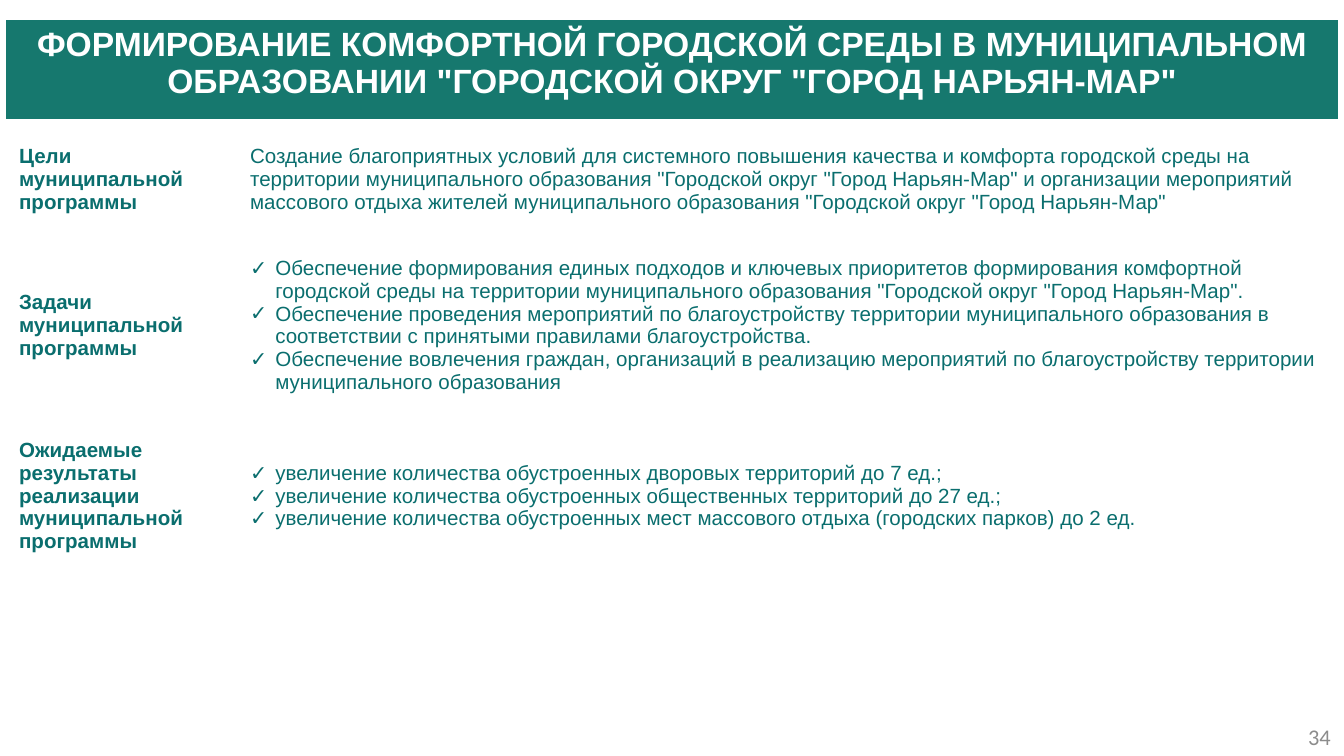
from typing import NamedTuple

from lxml import etree
from pptx import Presentation
from pptx.dml.color import RGBColor
from pptx.enum.text import MSO_ANCHOR, PP_ALIGN
from pptx.oxml.ns import qn
from pptx.util import Pt

LEFT, CENTER, RIGHT = PP_ALIGN.LEFT, PP_ALIGN.CENTER, PP_ALIGN.RIGHT
TOP, MIDDLE = MSO_ANCHOR.TOP, MSO_ANCHOR.MIDDLE

WHITE, BANNER, TEAL, GREY = "FFFFFF", "16786E", "0A6E6E", "8C8C8C"
CHECK = "✓"
INDENT = 13.5
COLUMN_WIDTHS = (123.8, 590.4)
BANNER_HEIGHT = 54


class Section(NamedTuple):
    label: str
    lines: tuple[str, ...]
    height: float
    bullet: str = ""


BANNER_TEXT = (
    "ФОРМИРОВАНИЕ КОМФОРТНОЙ ГОРОДСКОЙ СРЕДЫ В МУНИЦИПАЛЬНОМ "
    'ОБРАЗОВАНИИ "ГОРОДСКОЙ ОКРУГ "ГОРОД НАРЬЯН-МАР"'
)
SECTIONS = (
    Section(
        "Цели муниципальной программы",
        ("Создание благоприятных условий для системного повышения качества и "
         "комфорта городской среды на территории муниципального образования "
         '"Городской округ "Город Нарьян-Мар" и организации мероприятий '
         "массового отдыха жителей муниципального образования "
         '"Городской округ "Город Нарьян-Мар"',),
        64,
    ),
    Section(
        "Задачи муниципальной программы",
        ("Обеспечение формирования единых подходов и ключевых приоритетов "
         "формирования комфортной городской среды на территории муниципального "
         'образования "Городской округ "Город Нарьян-Мар".',
         "Обеспечение проведения мероприятий по благоустройству территории "
         "муниципального образования в соответствии с принятыми правилами "
         "благоустройства.",
         "Обеспечение вовлечения граждан, организаций в реализацию мероприятий "
         "по благоустройству территории муниципального образования"),
        92.2, CHECK,
    ),
    Section(
        "Ожидаемые результаты реализации муниципальной программы",
        ("увеличение количества обустроенных дворовых территорий до 7 ед.;",
         "увеличение количества обустроенных общественных территорий до 27 ед.;",
         "увеличение количества обустроенных мест массового отдыха "
         "(городских парков) до 2 ед."),
        90.7, CHECK,
    ),
)


def rgb(value: str) -> RGBColor:
    return RGBColor.from_string(value)


def add_bullet(para, symbol: str) -> None:
    properties = para._p.get_or_add_pPr()
    properties.set("marL", str(Pt(INDENT)))
    properties.set("indent", str(-Pt(INDENT)))
    etree.SubElement(properties, qn("a:buFont"), typeface="Arial")
    etree.SubElement(properties, qn("a:buChar"), char=symbol)


def write_text(frame, lines: tuple[str, ...], *, size: float = 11,
               color: str = TEAL, font: str = "Arial", bold: bool = False,
               align=LEFT, bullet: str = "") -> None:
    frame.word_wrap = True
    for index, line in enumerate(lines):
        para = frame.paragraphs[0] if index == 0 else frame.add_paragraph()
        para.alignment = align
        if bullet:
            add_bullet(para, bullet)
        span = para.add_run()
        span.text = line
        span.font.size = Pt(size)
        span.font.name = font
        span.font.bold = bold
        span.font.color.rgb = rgb(color)


def fill_cell(cell, lines: tuple[str, ...], *, fill: str = "",
              anchor=MIDDLE, **text_format) -> None:
    cell.vertical_anchor = anchor
    if fill:
        cell.fill.solid()
        cell.fill.fore_color.rgb = rgb(fill)
    else:
        cell.fill.background()
    write_text(cell.text_frame, lines, **text_format)


def add_program_table(page) -> None:
    heights = (BANNER_HEIGHT, *(section.height for section in SECTIONS))
    frame = page.shapes.add_table(
        len(heights), len(COLUMN_WIDTHS), Pt(3), Pt(10.2),
        Pt(sum(COLUMN_WIDTHS)), Pt(sum(heights)))
    table = frame.table
    table.horz_banding = False
    for column, width in zip(table.columns, COLUMN_WIDTHS):
        column.width = Pt(width)
    for row, height in zip(table.rows, heights):
        row.height = Pt(height)

    # Banner across both columns
    banner = table.cell(0, 0)
    banner.merge(table.cell(0, 1))
    fill_cell(banner, (BANNER_TEXT,), fill=BANNER, anchor=TOP,
              size=18, color=WHITE, bold=True, align=CENTER)

    # Label and content of each section
    for index, section in enumerate(SECTIONS, start=1):
        fill_cell(table.cell(index, 0), (section.label,), bold=True)
        fill_cell(table.cell(index, 1), section.lines, bullet=section.bullet)


def add_page_number(page, number: str) -> None:
    box = page.shapes.add_textbox(Pt(552.2), Pt(383.8), Pt(167.8), Pt(21.6))
    box.text_frame.vertical_anchor = MIDDLE
    write_text(box.text_frame, (number,), size=12, color=GREY,
               font="Calibri", align=RIGHT)


def main() -> None:
    deck = Presentation()
    deck.slide_width, deck.slide_height = Pt(720), Pt(405)
    page = deck.slides.add_slide(deck.slide_layouts[6])
    add_page_number(page, "34")
    add_program_table(page)
    deck.save("out.pptx")


if __name__ == "__main__":
    main()
